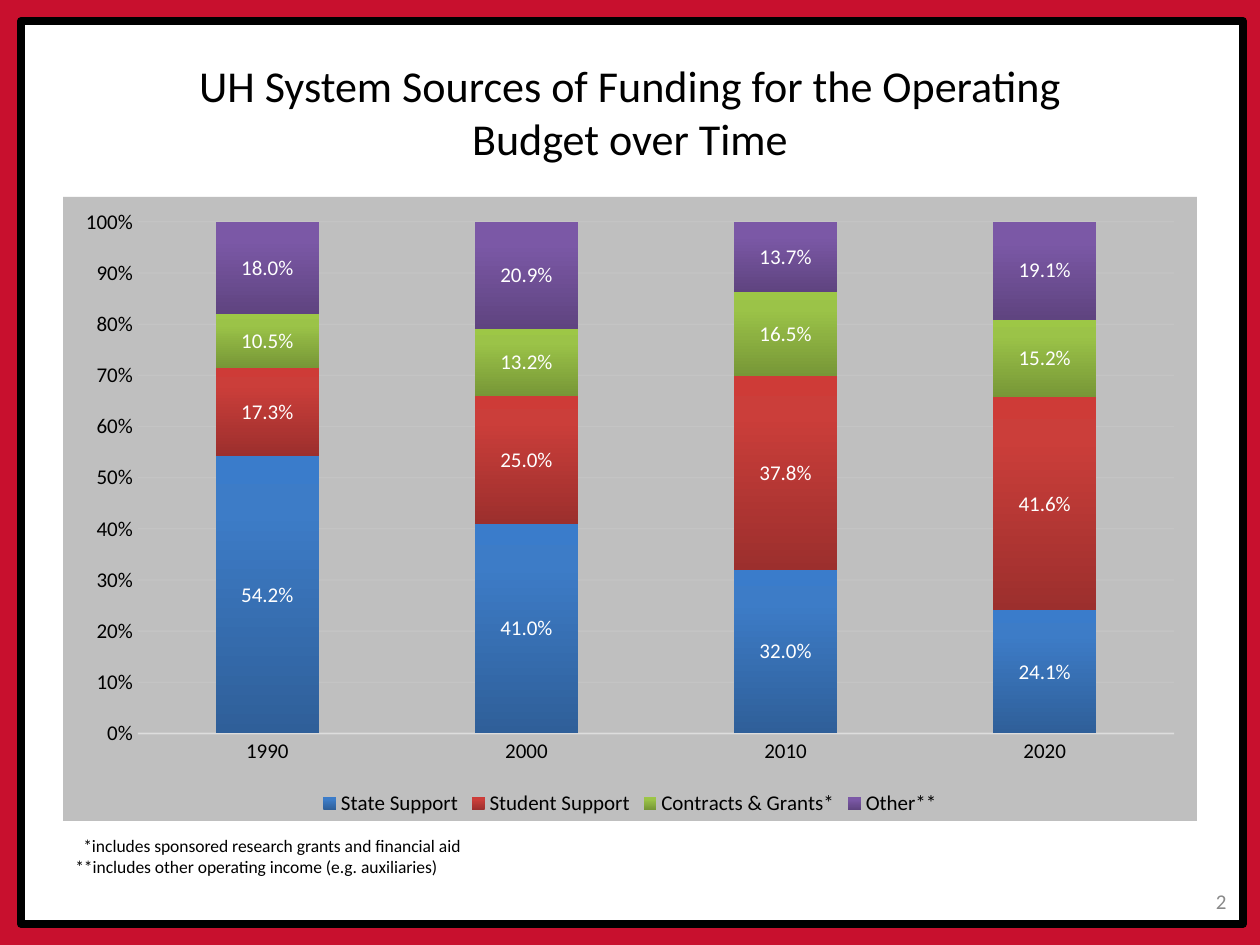
from lxml import etree
from pptx import Presentation
from pptx.chart.data import CategoryChartData
from pptx.dml.color import RGBColor
from pptx.enum.chart import XL_CHART_TYPE, XL_LABEL_POSITION, XL_LEGEND_POSITION, XL_TICK_MARK
from pptx.enum.shapes import MSO_SHAPE
from pptx.enum.text import MSO_ANCHOR, MSO_AUTO_SIZE, PP_ALIGN
from pptx.oxml import parse_xml
from pptx.oxml.ns import nsdecls, qn
from pptx.util import Emu, Pt

STACK = XL_CHART_TYPE.COLUMN_STACKED_100
CENTER, RIGHT = PP_ALIGN.CENTER, PP_ALIGN.RIGHT
MIDDLE = MSO_ANCHOR.MIDDLE
NONE = XL_TICK_MARK.NONE

HUE = {"red": "C8102E", "white": "FFFFFF", "black": "000000",
       "gray": "898989", "panel": "BFBFBF", "rule": "F2F2F2"}


def px(*nums):
    return [Emu(round(n * 914400 / 126)) for n in nums]


def style(font, size, hue="black"):
    for key, val in {"name": "Calibri", "size": Pt(size), "bold": False}.items():
        setattr(font, key, val)
    font.color.rgb = RGBColor.from_string(HUE[hue])


deck = Presentation()
deck.slide_width, deck.slide_height = px(1260, 945)
slide = deck.slides.add_slide(deck.slide_layouts[5])
slide.background.fill.solid()
slide.background.fill.fore_color.rgb = RGBColor.from_string(HUE["red"])

# White panel with black frame, behind the title
frame = slide.shapes.add_shape(MSO_SHAPE.RECTANGLE, *px(21, 21, 1222, 903))
frame.shadow.inherit = False
frame.fill.solid()
frame.fill.fore_color.rgb = RGBColor.from_string(HUE["white"])
frame.line.color.rgb = RGBColor.from_string(HUE["black"])
frame.line.width = Pt(4.5)
slide.shapes._spTree.insert(2, frame._element)

# Title
title = slide.shapes.title
title.left, title.top, title.width, title.height = px(126, 69, 1008, 84)
text = title.text_frame
text.text = "UH System Sources of Funding for the Operating Budget over Time"
text.auto_size = MSO_AUTO_SIZE.NONE
text.vertical_anchor = MIDDLE
text.paragraphs[0].alignment = CENTER
style(text.paragraphs[0].runs[0].font, 25.2)

# Chart data
data = CategoryChartData(number_format="0.0%")
data.categories = ["1990", "2000", "2010", "2020"]
# name, shares, gradient from bottom to top
funds = [
    ("State Support", (0.542, 0.410, 0.320, 0.241), ("2F5F99", "3D7CC7", "3A7CCB")),
    ("Student Support", (0.173, 0.250, 0.378, 0.416), ("9C2F2D", "CB3E3A", "CE3B37")),
    ("Contracts & Grants*", (0.105, 0.132, 0.165, 0.152), ("779737", "9BC348", "9DC746")),
    ("Other**", (0.180, 0.209, 0.137, 0.191), ("5F4480", "7B58A6", "7C57A8")),
]
for name, shares, tones in funds:
    data.add_series(name, shares)

# Stacked chart on a gray panel
chart = slide.shapes.add_chart(STACK, *px(63, 197, 1134, 624), data).chart
chart.has_title = False
style(chart.font, 10)
panel = parse_xml(
    f'<c:spPr {nsdecls("c", "a")}><a:solidFill><a:srgbClr val="{HUE["panel"]}"/>'
    '</a:solidFill><a:ln><a:noFill/></a:ln></c:spPr>')
chart._chartSpace.find(qn("c:chart")).addnext(panel)

# Plot position as shares of the chart
area = chart._chartSpace.find(".//" + qn("c:plotArea"))
for old in area.findall(qn("c:layout")):
    area.remove(old)
layout = etree.Element(qn("c:layout"))
manual = etree.SubElement(layout, qn("c:manualLayout"))
for tag, val in {"layoutTarget": "inner", "xMode": "edge", "yMode": "edge",
                 "x": "0.066", "y": "0.04", "w": "0.914", "h": "0.82"}.items():
    etree.SubElement(manual, qn("c:" + tag)).set("val", val)
area.insert(0, layout)

# Series fills and labels
plot = chart.plots[0]
plot.gap_width, plot.overlap, plot.vary_by_categories = 150, 100, False
for bar, (name, shares, tones) in zip(plot.series, funds):
    stops = "".join(f'<a:gs pos="{pos}"><a:srgbClr val="{tone}"/></a:gs>'
                    for pos, tone in zip((0, 80000, 100000), tones))
    bar.format.fill.solid()
    solid = bar._element.find(".//" + qn("a:solidFill"))
    solid.getparent().replace(solid, parse_xml(
        f'<a:gradFill {nsdecls("a")} rotWithShape="1"><a:gsLst>{stops}</a:gsLst>'
        '<a:lin ang="16200000" scaled="0"/></a:gradFill>'))
    labels = bar.data_labels
    for key, val in {"show_value": True, "position": XL_LABEL_POSITION.CENTER,
                     "number_format": "0.0%", "number_format_is_linked": False}.items():
        setattr(labels, key, val)
    style(labels.font, 12, "white")

# Axes, with faint rules
cats, vals = chart.category_axis, chart.value_axis
vals.has_major_gridlines = True
vals.maximum_scale, vals.minimum_scale, vals.major_unit = 1, 0, 0.1
vals.tick_labels.number_format = "0%"
vals.tick_labels.number_format_is_linked = False
vals.format.line.fill.background()
for axis, line, width, alpha in ((cats, cats.format.line, 1, 54),
                                 (vals, vals.major_gridlines.format.line, 0.75, 10)):
    axis.major_tick_mark = axis.minor_tick_mark = NONE
    line.color.rgb = RGBColor.from_string(HUE["rule"])
    line.width = Pt(width)
    tone = axis._element.find(f".//{qn('a:ln')}//{qn('a:srgbClr')}")
    etree.SubElement(tone, qn("a:alpha")).set("val", str(alpha * 1000))
    style(axis.tick_labels.font, 12)

# Legend
chart.has_legend = True
chart.legend.position = XL_LEGEND_POSITION.BOTTOM
chart.legend.include_in_layout = False
style(chart.legend.font, 12)

# Footnotes, the first set in so that the words line up
notes = slide.shapes.add_textbox(*px(63, 829, 882, 55)).text_frame
notes.word_wrap = True
notes.text = ("*includes sponsored research grants and financial aid\n"
              "**includes other operating income (e.g. auxiliaries)")
notes.paragraphs[0]._p.get_or_add_pPr().set("marL", str(px(8)[0]))
for para in notes.paragraphs:
    style(para.runs[0].font, 10)

# Slide number
page = slide.shapes.add_textbox(*px(955, 876, 284, 50)).text_frame
page.word_wrap = True
page.vertical_anchor = MIDDLE
page.text = "2"
page.paragraphs[0].alignment = RIGHT
style(page.paragraphs[0].runs[0].font, 12, "gray")

deck.save("out.pptx")
